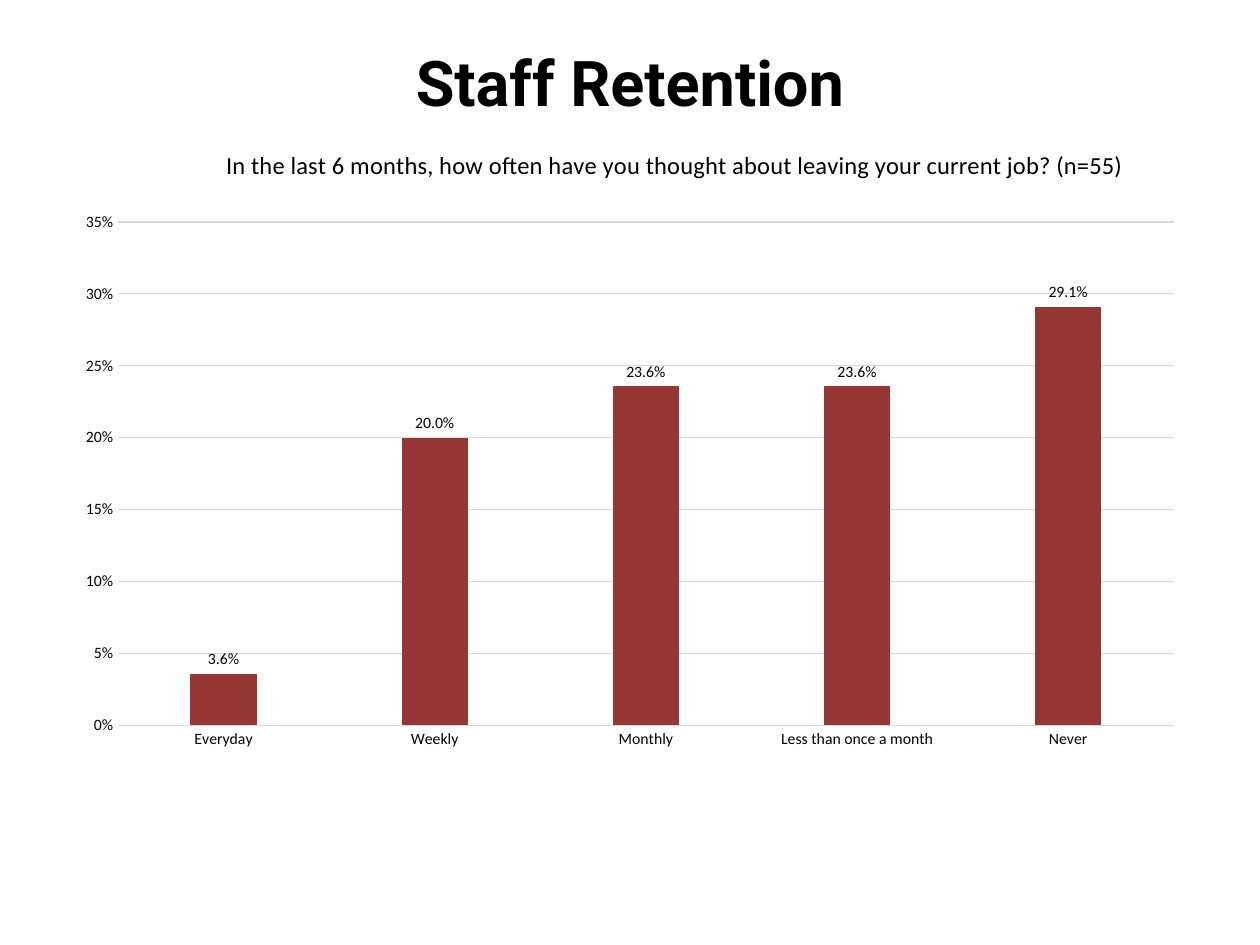
from lxml.etree import SubElement
from pptx import Presentation
from pptx.chart.data import CategoryChartData
from pptx.dml.color import RGBColor
from pptx.enum.chart import XL_CHART_TYPE, XL_LABEL_POSITION, XL_TICK_MARK
from pptx.enum.text import MSO_ANCHOR, PP_ALIGN
from pptx.oxml.ns import qn
from pptx.util import Pt


def color(value):
    return RGBColor.from_string(value)


def format_font(font, size, name, fill="000000", bold=False):
    font.size = Pt(size)
    font.name = name
    font.bold = bold
    font.color.rgb = color(fill)


def write(frame, text, align=PP_ALIGN.CENTER, **style):
    paragraph = frame.paragraphs[0]
    paragraph.alignment = align
    run = paragraph.add_run()
    run.text = text
    format_font(run.font, **style)


def place(element, successors, **values):
    for old in element.findall(qn("c:layout")):
        element.remove(old)
    layout = element.makeelement(qn("c:layout"), {})
    element.insert_element_before(layout, *successors)
    manual = SubElement(layout, qn("c:manualLayout"))
    for tag, value in values.items():
        SubElement(manual, qn(f"c:{tag}")).set("val", str(value))


class SurveySlide:
    heading_font = "Roboto"
    body_font = "Calibri"
    bar_fill = "953735"
    rule = "D9D9D9"

    def __init__(self, presentation):
        self.slide = presentation.slides.add_slide(presentation.slide_layouts[5])

    def heading(self, text, left, top, width, height):
        heading = self.slide.shapes.title
        heading.left, heading.top = Pt(left), Pt(top)
        heading.width, heading.height = Pt(width), Pt(height)
        heading.text_frame.vertical_anchor = MSO_ANCHOR.MIDDLE
        write(heading.text_frame, text, size=36, name=self.heading_font, bold=True)

    def format_line(self, line):
        line.color.rgb = color(self.rule)
        line.width = Pt(0.75)

    def format_axis(self, axis):
        axis.major_tick_mark = axis.minor_tick_mark = XL_TICK_MARK.NONE
        format_font(axis.tick_labels.font, 9, self.body_font)

    def column_chart(self, question, answers, left, top, width, height):
        responses = CategoryChartData(number_format="0.0%")
        responses.categories = list(answers)
        responses.add_series("Series 1", list(answers.values()))
        chart = self.slide.shapes.add_chart(
            XL_CHART_TYPE.COLUMN_CLUSTERED,
            Pt(left), Pt(top), Pt(width), Pt(height), responses,
        ).chart
        chart.has_legend = False
        format_font(chart.font, 10, self.body_font)

        chart.has_title = True
        write(chart.chart_title.text_frame, question, size=14, name=self.body_font)
        chart.chart_title.include_in_layout = False
        title = chart.chart_title._element
        place(title, ("c:overlay", "c:spPr", "c:txPr"),
              xMode="edge", yMode="edge", x=0.14, y=0.01)
        plot_area = chart._chartSpace.chart.plotArea
        place(plot_area, ("c:barChart",), layoutTarget="inner",
              xMode="edge", yMode="edge", x=0.0485, y=0.1355, w=0.931, h=0.806)

        self.format_axis(chart.category_axis)
        self.format_line(chart.category_axis.format.line)
        frequency = chart.value_axis
        self.format_axis(frequency)
        frequency.minimum_scale, frequency.maximum_scale = 0, 0.35
        frequency.major_unit = 0.05
        frequency.tick_labels.number_format = "0%"
        frequency.tick_labels.number_format_is_linked = False
        frequency.format.line.fill.background()
        self.format_line(frequency.major_gridlines.format.line)

        columns = chart.plots[0]
        columns.gap_width, columns.overlap = 219, -27
        columns.vary_by_categories = False
        series = columns.series[0]
        series.format.fill.solid()
        series.format.fill.fore_color.rgb = color(self.bar_fill)
        labels = series.data_labels
        labels.show_value = True
        labels.position = XL_LABEL_POSITION.OUTSIDE_END
        labels.number_format = "0.0%"
        labels.number_format_is_linked = False
        format_font(labels.font, 9, self.body_font)


def main():
    presentation = Presentation()
    presentation.slide_width, presentation.slide_height = Pt(720), Pt(540)
    retention = SurveySlide(presentation)
    retention.heading("Staff Retention", 36, 10, 648, 73)
    retention.column_chart(
        "In the last 6 months, how often have you thought about "
        "leaving your current job? (n=55)",
        {
            "Everyday": 0.036,
            "Weekly": 0.2,
            "Monthly": 0.236,
            "Less than once a month": 0.236,
            "Never": 0.291,
        },
        36, 78.5, 648, 357,
    )
    presentation.save("out.pptx")


if __name__ == "__main__":
    main()
